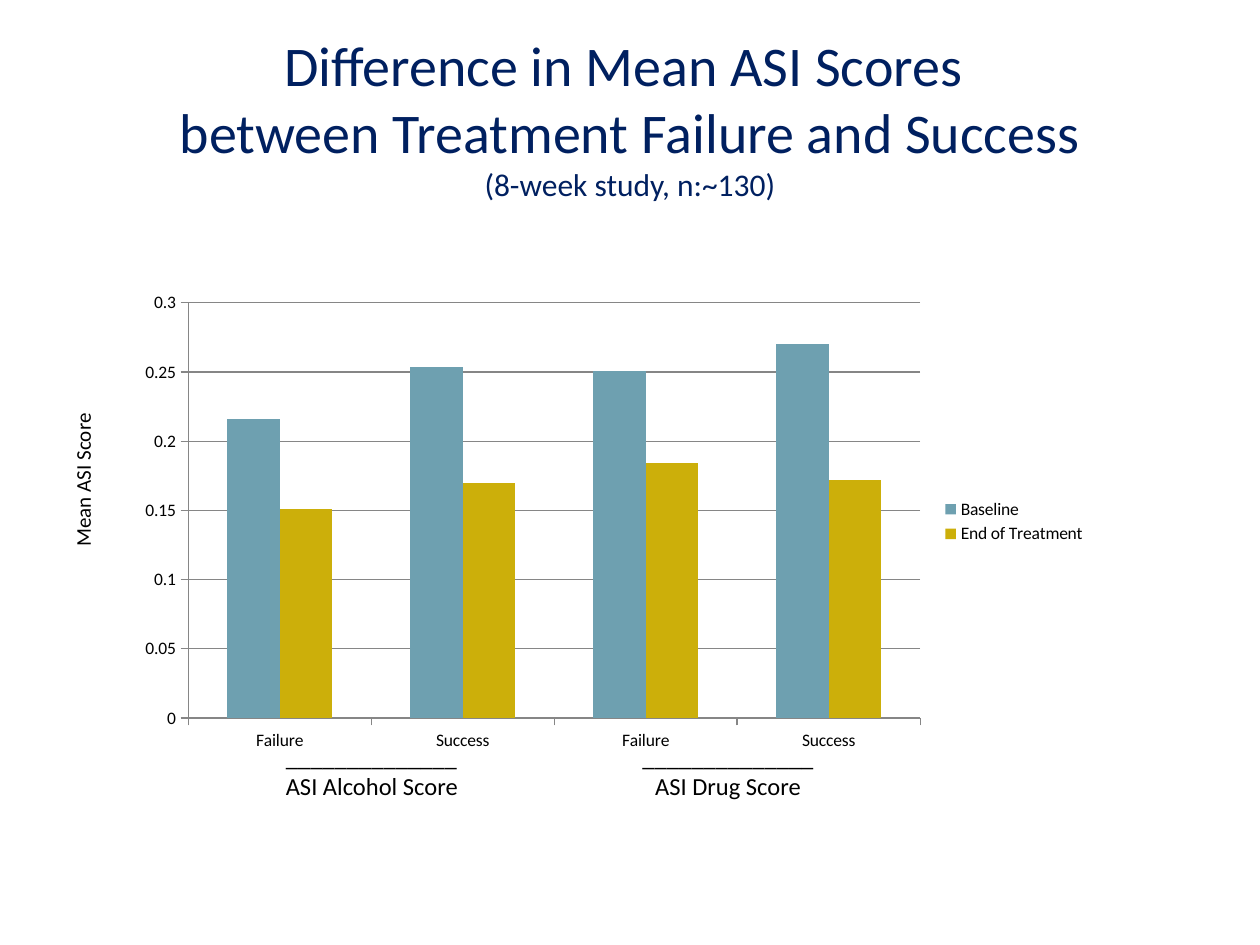
from pptx import Presentation
from pptx import util as u
from pptx.chart.data import CategoryChartData
from pptx.dml.color import RGBColor
from pptx.enum import chart as charts, text

# Content
TITLE = "Difference in Mean ASI Scores \vbetween Treatment Failure and Success\v"
SUBTITLE = "(8-week study, n:~130)"
CATEGORIES = ["Failure", "Success"] * 2
SERIES = [
    ("Baseline", [0.216, 0.254, 0.251, 0.27], "baseline"),
    ("End of Treatment", [0.151, 0.17, 0.184, 0.172], "treatment"),
]
GROUPS = [("ASI Alcohol Score", 2.17), ("ASI Drug Score", 5)]
GROUP_RULE = "_" * 14
AXIS_LABEL = "Mean ASI Score"

THEME = {
    "font": "Calibri",
    "colors": {"title": "002060", "text": "000000", "grid": "868686",
               "baseline": "6EA0B0", "treatment": "CCAF0A"},
    "sizes": {"title": 32, "subtitle": 18, "group": 14, "axis": 12, "chart": 10},
}


def color(name):
    return RGBColor.from_string(THEME["colors"][name])


def set_font(font, size, color_name="text"):
    values = {"name": THEME["font"], "size": u.Pt(THEME["sizes"][size])}
    for name, value in values.items():
        setattr(font, name, value)
    font.color.rgb = color(color_name)


def add_text(slide, box, paragraphs, wrap=False, anchor=text.MSO_ANCHOR.TOP):
    """Each paragraph is (alignment, [(wording, size, color), ...])."""
    shape = slide.shapes.add_textbox(*map(u.Inches, box))
    frame = shape.text_frame
    frame.word_wrap = wrap
    frame.vertical_anchor = anchor
    for index, (alignment, runs) in enumerate(paragraphs):
        paragraph = frame.add_paragraph() if index else frame.paragraphs[0]
        paragraph.alignment = alignment
        for wording, size, color_name in runs:
            for number, line in enumerate(wording.split("\v")):
                if number:
                    paragraph.add_line_break()
                if line:
                    run = paragraph.add_run()
                    run.text = line
                    set_font(run.font, size, color_name)
    return shape


def add_score_chart(slide):
    data = CategoryChartData(number_format="General")
    data.categories = CATEGORIES
    for name, values, _ in SERIES:
        data.add_series(name, values)
    box = map(u.Inches, (1, 2.25, 7.72, 3.78))
    chart = slide.shapes.add_chart(
        charts.XL_CHART_TYPE.COLUMN_CLUSTERED, *box, data).chart
    set_font(chart.font, "chart")
    chart.has_title = False
    chart.has_legend = True
    chart.legend.position = charts.XL_LEGEND_POSITION.RIGHT
    chart.legend.include_in_layout = False

    # Columns
    plot = chart.plots[0]
    for name, value in {"gap_width": 150, "overlap": 0, "vary_by_categories": False}.items():
        setattr(plot, name, value)
    for series, (_, _, color_name) in zip(plot.series, SERIES):
        series.format.fill.solid()
        series.format.fill.fore_color.rgb = color(color_name)

    # Axes and gridlines
    value_axis = chart.value_axis
    scale = {"minimum_scale": 0, "maximum_scale": 0.3, "major_unit": 0.05,
             "has_major_gridlines": True}
    for name, value in scale.items():
        setattr(value_axis, name, value)
    for axis in (chart.category_axis, value_axis):
        axis.major_tick_mark = charts.XL_TICK_MARK.OUTSIDE
    for part in (chart.category_axis, value_axis, value_axis.major_gridlines):
        part.format.line.color.rgb = color("grid")
        part.format.line.width = u.Pt(0.75)


def main():
    presentation = Presentation()
    presentation.slide_width, presentation.slide_height = u.Inches(10), u.Inches(7.5)
    slide = presentation.slides.add_slide(presentation.slide_layouts[6])
    left, center = text.PP_ALIGN.LEFT, text.PP_ALIGN.CENTER

    # Title
    add_text(slide, (0.5, 0.3, 9, 1.25),
             [(center, [(TITLE, "title", "title"), (SUBTITLE, "subtitle", "title")])],
             wrap=True, anchor=text.MSO_ANCHOR.MIDDLE)

    add_score_chart(slide)

    # Labels under each pair of categories
    for label, x in GROUPS:
        add_text(slide, (x, 5.84, 1.58, 0.57),
                 [(left, [(GROUP_RULE, "group", "text")]),
                  (center, [(label, "group", "text")])])

    # Vertical axis label
    axis_label = add_text(slide, (0.02, 3.65, 1.27, 0.3),
                          [(left, [(AXIS_LABEL, "axis", "text")])])
    axis_label.rotation = 270

    presentation.save("out.pptx")


if __name__ == "__main__":
    main()
